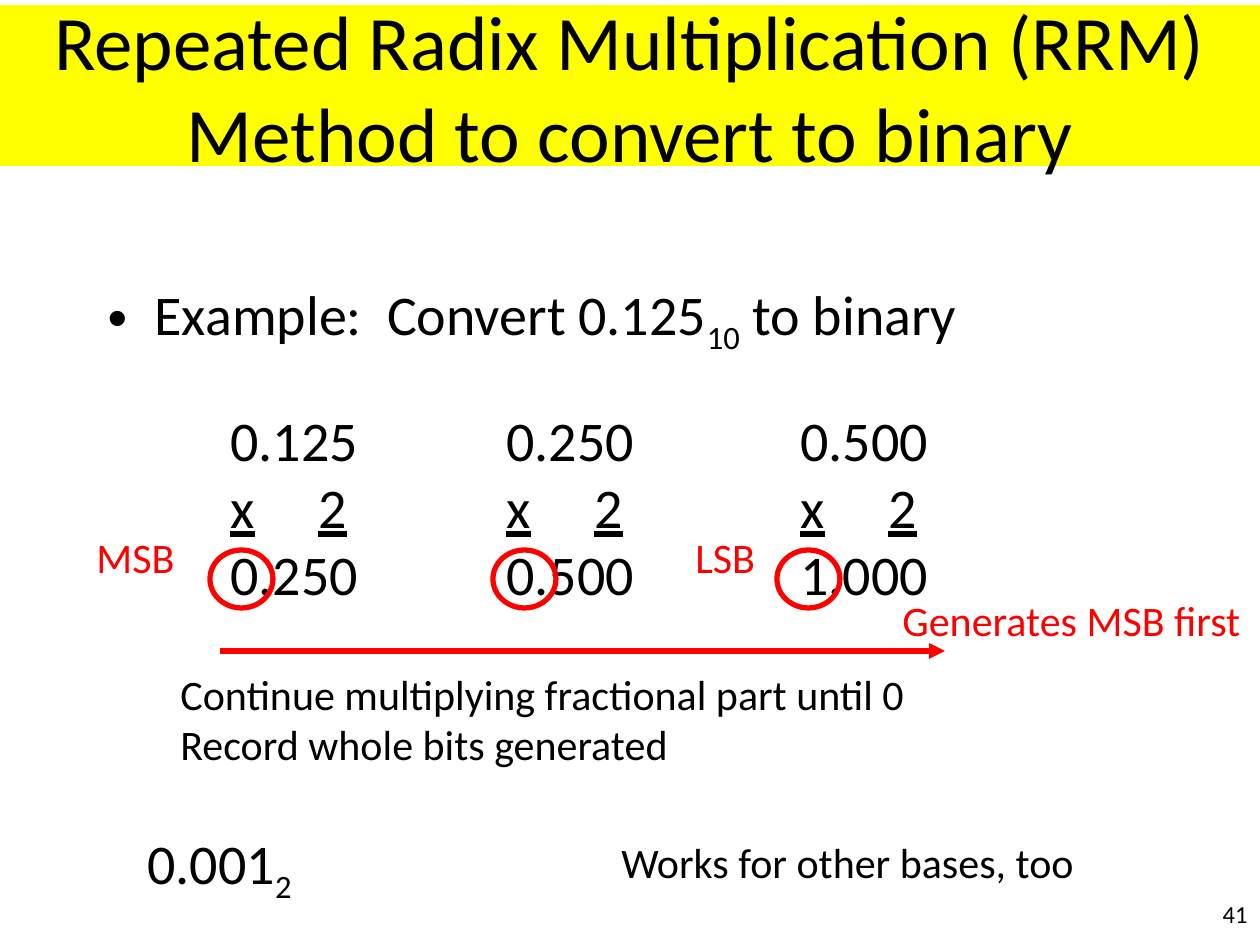
from lxml.etree import SubElement
from pptx import Presentation
from pptx.dml.color import RGBColor
from pptx.enum.shapes import MSO_CONNECTOR as CONN, MSO_SHAPE as SHAPE
from pptx.enum.text import MSO_ANCHOR as ANCHOR, MSO_AUTO_SIZE as FIT, PP_ALIGN as ALIGN
from pptx.oxml.ns import qn
from pptx.util import Emu, Pt

COLORS = {"band": "FFFF00", "text": "000000", "mark": "FF0000"}
FONT = "Calibri"
EMU_PER_PX = 914400 / 126


def px(n):
    return Emu(round(n * EMU_PER_PX))


def color(name):
    return RGBColor.from_string(COLORS[name])


def add_run(p, text, size, tint="text", sub=False, **formats):
    r = p.add_run()
    r.text = text
    for name, value in {"name": FONT, "size": Pt(size), **formats}.items():
        setattr(r.font, name, value)
    r.font.color.rgb = color(tint)
    if sub:
        r._r.get_or_add_rPr().set("baseline", "-25000")
    return r


def place(sp, box):
    sp.left, sp.top, sp.width, sp.height = map(px, box)


def add_text(slide, box, lines, size, tint="text", align=ALIGN.LEFT):
    tf = slide.shapes.add_textbox(*map(px, box)).text_frame
    tf.word_wrap = True
    for i, line in enumerate(lines):
        p = tf.add_paragraph() if i else tf.paragraphs[0]
        p.alignment = align
        add_run(p, line, size, tint)
    return tf


def style_line(sp):
    sp.line.color.rgb = color("mark")
    sp.line.width = Pt(3)


def add_title(slide, box):
    sp = slide.shapes.title
    place(sp, box)
    sp.fill.solid()
    sp.fill.fore_color.rgb = color("band")
    tf = sp.text_frame
    tf.auto_size, tf.vertical_anchor, tf.word_wrap = FIT.NONE, ANCHOR.MIDDLE, True
    p = tf.paragraphs[0]
    p.alignment = ALIGN.CENTER
    add_run(p, "Repeated Radix Multiplication (RRM) Method to convert to binary", 44)


def add_example(slide, box):
    sp = slide.placeholders[1]
    place(sp, box)
    sp.text_frame.auto_size = FIT.NONE
    p = sp.text_frame.paragraphs[0]
    pPr = p._p.get_or_add_pPr()
    pPr.set("marL", str(px(47)))
    pPr.set("indent", str(-px(47)))
    p.space_before = Pt(6.4)
    add_run(p, "Example:  Convert 0.125", 32)
    add_run(p, "10", 32, sub=True)
    add_run(p, " to binary", 32)


def add_product(slide, box, factor, result):
    """One multiplication by two, its middle line underlined across a tab."""
    tf = add_text(slide, box, [factor, "x\t2", result], 32)
    p = tf.paragraphs[1]
    p.runs[0].font.underline = True
    tabs = SubElement(p._p.get_or_add_pPr(), qn("a:tabLst"))
    SubElement(tabs, qn("a:tab"), pos=str(px(88)), algn="l")


def add_ring(slide, box):
    sp = slide.shapes.add_shape(SHAPE.OVAL, *map(px, box))
    sp.shadow.inherit = False
    sp.fill.background()
    style_line(sp)


def add_arrow(slide, x1, x2, y):
    cx = slide.shapes.add_connector(CONN.STRAIGHT, px(x1), px(y), px(x2), px(y))
    style_line(cx)
    SubElement(cx.line._get_or_add_ln(), qn("a:tailEnd"), type="triangle")
    SubElement(cx._element.spPr, qn("a:effectLst"))


def add_working(slide, box):
    """Three products, ringed whole bits and the reading direction."""
    left, top, width, height = box
    products = [(8, "0.125", "0.250"), (284, "0.250", "0.500"), (578, "0.500", "1.000")]
    for i, (dx, factor, result) in enumerate(products):
        add_product(slide, (left + dx, top, 155, height), factor, result)
        add_ring(slide, (left + i * 567 // 2, top + 151, 63, 58))
    add_arrow(slide, left + 10, left + 735, top + 252)
    labels = [("MSB", -126, 126, 105), ("LSB", 473, 126, 86),
              ("Generates MSB first", 680, 189, 370)]
    for text, dx, dy, w in labels:
        add_text(slide, (left + dx, top + dy, w, 63), [text], 24, "mark")


def add_conclusion(slide, box):
    left, top, width, height = box
    add_text(slide, (left + 33, top, width, 115),
             ["Continue multiplying fractional part until 0",
              "Record whole bits generated"], 24)
    tf = add_text(slide, (left, top + 160, 174, 81), ["0.001"], 32)
    add_run(tf.paragraphs[0], "2", 32, sub=True)
    add_text(slide, (left + 474, top + 168, 481, 63), ["Works for other bases, too"], 24)


def main():
    prs = Presentation()
    prs.slide_width, prs.slide_height = px(1260), px(945)
    slide = prs.slides.add_slide(prs.slide_layouts[1])
    add_title(slide, (0, 5, 1260, 161))
    add_example(slide, (95, 273, 1071, 567))
    add_working(slide, (210, 399, 735, 217))
    add_conclusion(slide, (135, 662, 757, 241))
    # Slide number
    add_text(slide, (998, 893, 262, 63), ["41"], 14, align=ALIGN.RIGHT)
    prs.save("out.pptx")


if __name__ == "__main__":
    main()
